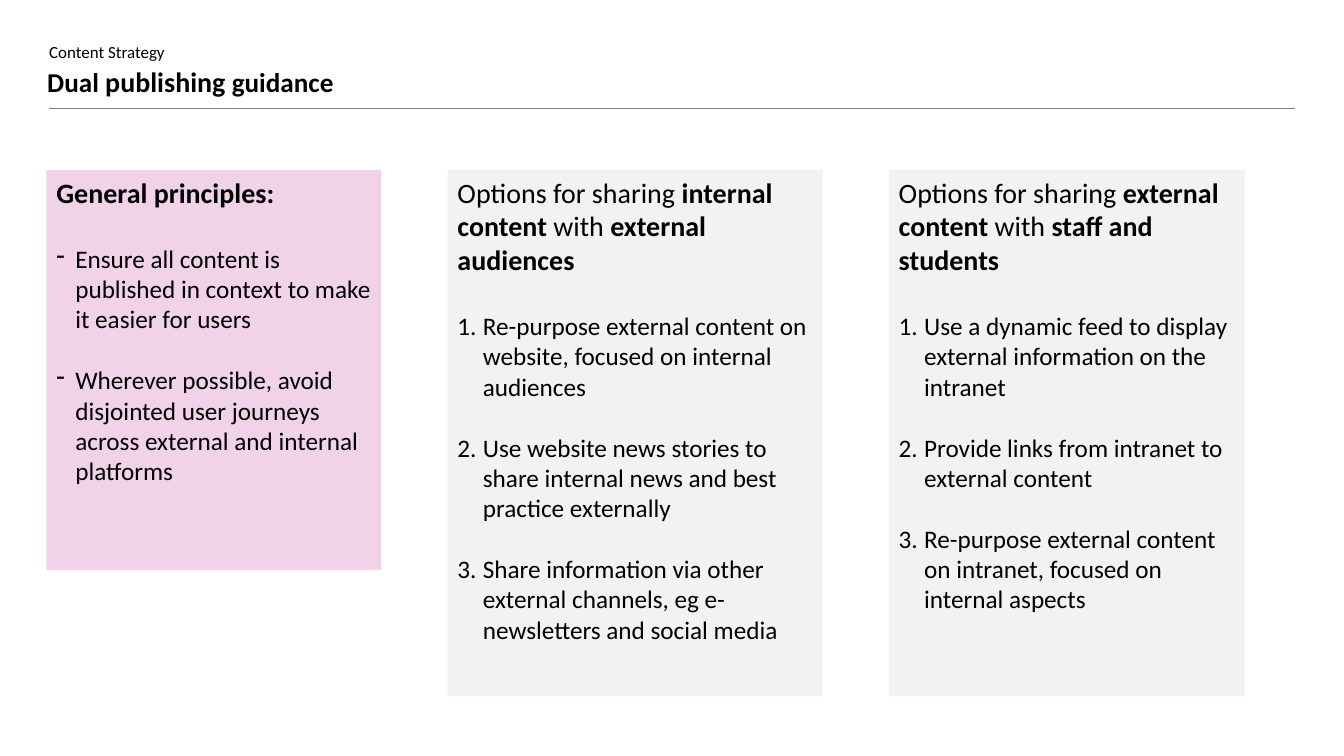
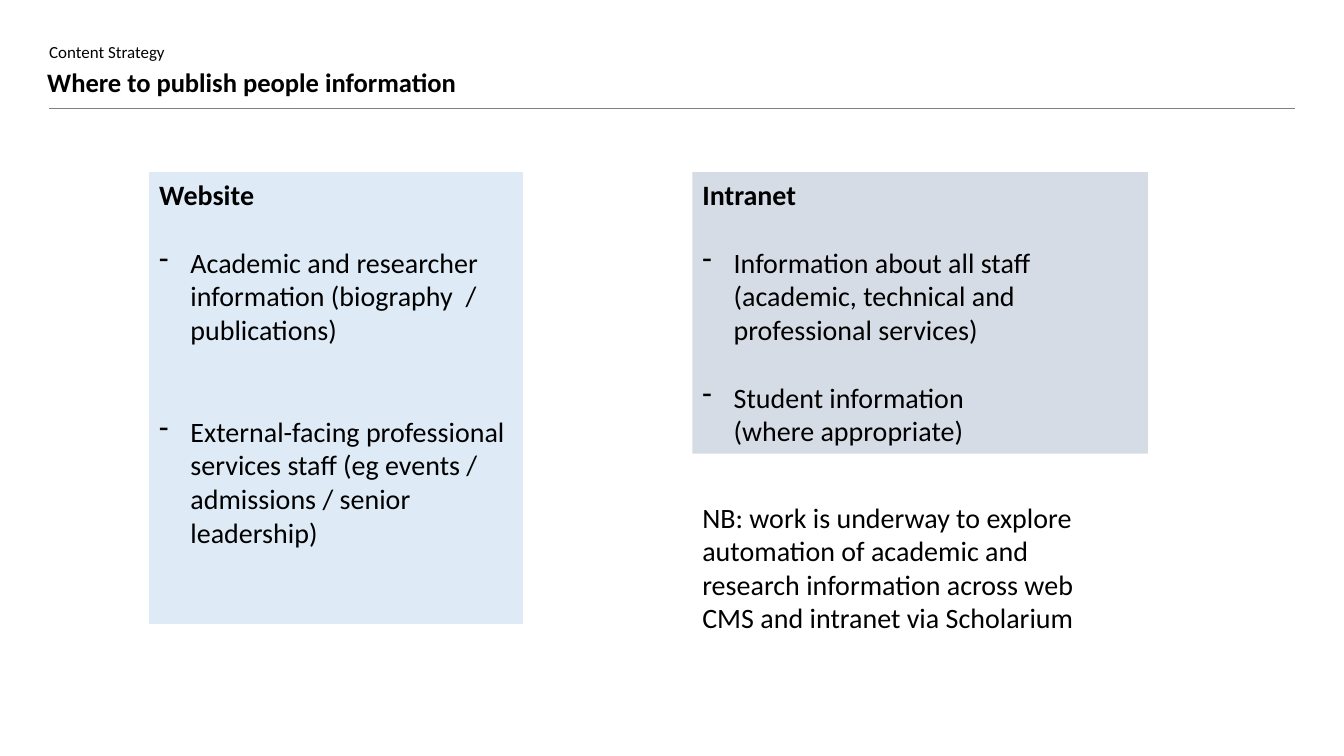
from dataclasses import dataclass

from lxml import etree
from pptx import Presentation
from pptx.dml.color import RGBColor
from pptx.enum.shapes import MSO_CONNECTOR, MSO_SHAPE
from pptx.enum.text import MSO_ANCHOR, MSO_AUTO_SIZE, PP_ALIGN
from pptx.oxml.ns import qn
from pptx.util import Cm, Pt

RECTANGLE = MSO_SHAPE.RECTANGLE
STRAIGHT = MSO_CONNECTOR.STRAIGHT
TOP, MIDDLE = MSO_ANCHOR.TOP, MSO_ANCHOR.MIDDLE
LEFT = PP_ALIGN.LEFT
NO_AUTOFIT = MSO_AUTO_SIZE.NONE

FONT = "Calibri"
BLACK, RULE_GREY = "000000", "808080"
MAGENTA, PALE_GREY = "B4268E", "F2F2F2"
PALE_BLUE, BLUE_GREY = "DEEBF7", "D6DCE5"

TITLE_ONLY = 5
SECTION = "Content Strategy"
PANEL_INSETS = (0.25, 0.13, 0.25, 0.13)
HEADER_INSETS = (0, 0.03, 0, 0)

# Space that equals one line of text at each size, in points
LINE_18, LINE_20 = 22, 24.4


@dataclass(frozen=True)
class Span:
    text: str
    size: float = 20
    bold: bool = False


@dataclass(frozen=True)
class Para:
    spans: tuple[Span, ...]
    before: float = 0
    bullet: str = ""  # "-" for a dash, "1." for numbering
    indent: float = 0


@dataclass(frozen=True)
class Panel:
    left: float
    top: float
    width: float
    height: float
    paras: tuple[Para, ...]
    fill: str = ""
    opacity: int = 100


def rgb(color: str) -> RGBColor:
    return RGBColor.from_string(color)


def add_bullet(paragraph, bullet: str, indent: float) -> None:
    """Give a paragraph a hanging dash or number."""
    props = paragraph._p.get_or_add_pPr()
    props.set("marL", str(Cm(indent)))
    props.set("indent", str(-Cm(indent)))
    if bullet == "1.":
        etree.SubElement(props, qn("a:buAutoNum"), type="arabicPeriod")
    else:
        etree.SubElement(props, qn("a:buChar"), char=bullet)


def write_text(frame, paras: tuple[Para, ...], insets: tuple[float, ...], anchor) -> None:
    frame.word_wrap = True
    frame.auto_size = NO_AUTOFIT
    frame.vertical_anchor = anchor
    (frame.margin_left, frame.margin_top,
     frame.margin_right, frame.margin_bottom) = map(Cm, insets)
    for index, para in enumerate(paras):
        paragraph = frame.add_paragraph() if index else frame.paragraphs[0]
        paragraph.alignment = LEFT
        paragraph.space_before = Pt(para.before)
        if para.bullet:
            add_bullet(paragraph, para.bullet, para.indent)
        for span in para.spans:
            for row, line in enumerate(span.text.split("\n")):
                if row:
                    paragraph.add_line_break()
                run = paragraph.add_run()
                run.text = line
                run.font.name = FONT
                run.font.size = Pt(span.size)
                run.font.bold = span.bold
                run.font.color.rgb = rgb(BLACK)


def add_panel(slide, panel: Panel, insets: tuple[float, ...] = PANEL_INSETS) -> None:
    """Draw a filled text panel, or a plain text box when it has no fill."""
    box = tuple(map(Cm, (panel.left, panel.top, panel.width, panel.height)))
    if panel.fill:
        shape = slide.shapes.add_shape(RECTANGLE, *box)
        shape.shadow.inherit = False
        shape.fill.solid()
        shape.fill.fore_color.rgb = rgb(panel.fill)
        shape.line.fill.background()
        if panel.opacity < 100:
            color = shape._element.spPr.find(qn("a:solidFill"))[0]
            etree.SubElement(color, qn("a:alpha"), val=str(panel.opacity * 1000))
    else:
        shape = slide.shapes.add_textbox(*box)
    write_text(shape.text_frame, panel.paras, insets, TOP)


def add_header(slide, title_spans: tuple[Span, ...]) -> None:
    """Section name, title and the rule below them."""
    section = Para((Span(SECTION, 12.1),), before=0.8)
    add_panel(slide, Panel(1.24, 1.02, 9.45, 0.53, (section,)), HEADER_INSETS)

    title = slide.shapes.title
    title.left, title.top, title.width, title.height = map(Cm, (1.19, 1.6, 28.22, 0.89))
    write_text(title.text_frame, (Para(title_spans, before=0.7),), HEADER_INSETS, MIDDLE)

    rule = slide.shapes.add_connector(STRAIGHT, Cm(1.24), Cm(2.72), Cm(32.64), Cm(2.72))
    rule.line.color.rgb = rgb(RULE_GREY)
    rule.line.width = Pt(0.41)
    etree.SubElement(rule._element.spPr, qn("a:effectLst"))


def items(texts: tuple[str, ...], bullet: str, indent: float, size: float,
          first_gap: float, gap: float) -> tuple[Para, ...]:
    """List items set apart by the given gaps."""
    return tuple(
        Para((Span(text, size),), gap if index else first_gap, bullet, indent)
        for index, text in enumerate(texts)
    )


def heading(text: str) -> Para:
    return Para((Span(text, bold=True),))


def options_heading(shared: str, audience: str) -> Para:
    return Para((Span("Options for sharing"), Span(f" {shared} ", bold=True),
                 Span("with"), Span(f" {audience}", bold=True)))


def options(*texts: str) -> tuple[Para, ...]:
    return items(texts, "1.", 0.64, 18, LINE_20, LINE_18)


# Dual publishing guidance
GUIDANCE_TITLE = (Span("Dual ", 19.4, True), Span("publishing", 20, True),
                  Span(" guidance", 19.4, True))
GUIDANCE_PANELS = (
    Panel(11.28, 4.29, 9.45, 13.26, (
        options_heading("internal content", "external audiences"),
        *options(
            "Re-purpose external content on website, focused on internal audiences",
            "Use website news stories to share internal news and best practice externally",
            "Share information via other external channels, eg e-newsletters and social media",
        )), PALE_GREY),
    Panel(1.17, 4.29, 8.43, 10.08, (
        heading("General principles:"),
        *items((
            "Ensure all content is published in context to make it easier for users",
            "Wherever possible, avoid disjointed user journeys across external and "
            "internal platforms",
        ), "-", 0.48, 18, LINE_20, LINE_18)), MAGENTA, 20),
    Panel(22.4, 4.29, 8.97, 13.26, (
        options_heading("external content", "staff and students"),
        *options(
            "Use a dynamic feed to display external information on the intranet",
            "Provide links from intranet to external content",
            "Re-purpose external content on intranet, focused on internal aspects",
        )), PALE_GREY),
)

# Where to publish people information
PEOPLE_TITLE = (Span("Where to publish people information", 19, True),)
PEOPLE_PANELS = (
    Panel(3.76, 4.34, 9.42, 11.38, (
        heading("Website"),
        *items((
            "Academic and researcher information (biography  / publications)",
            "External-facing professional services staff (eg events / admissions / "
            "senior leadership)",
        ), "-", 0.79, 20, LINE_20, 2 * LINE_20)), PALE_BLUE),
    Panel(17.45, 4.34, 11.48, 7.09, (
        heading("Intranet"),
        *items((
            "Information about all staff (academic, technical and professional services)",
            "Student information\n(where appropriate)",
        ), "-", 0.79, 20, LINE_20, LINE_20)), BLUE_GREY),
    Panel(17.45, 12.47, 10.92, 3.68, (
        Para((Span("NB: work is underway to explore automation of academic and research "
                   "information across web CMS and intranet via Scholarium"),)),)),
)


def main() -> None:
    deck = Presentation()
    deck.slide_width, deck.slide_height = Cm(33.87), Cm(19.05)
    for title, panels in ((GUIDANCE_TITLE, GUIDANCE_PANELS), (PEOPLE_TITLE, PEOPLE_PANELS)):
        slide = deck.slides.add_slide(deck.slide_layouts[TITLE_ONLY])
        add_header(slide, title)
        for panel in panels:
            add_panel(slide, panel)
    deck.save("out.pptx")


if __name__ == "__main__":
    main()
